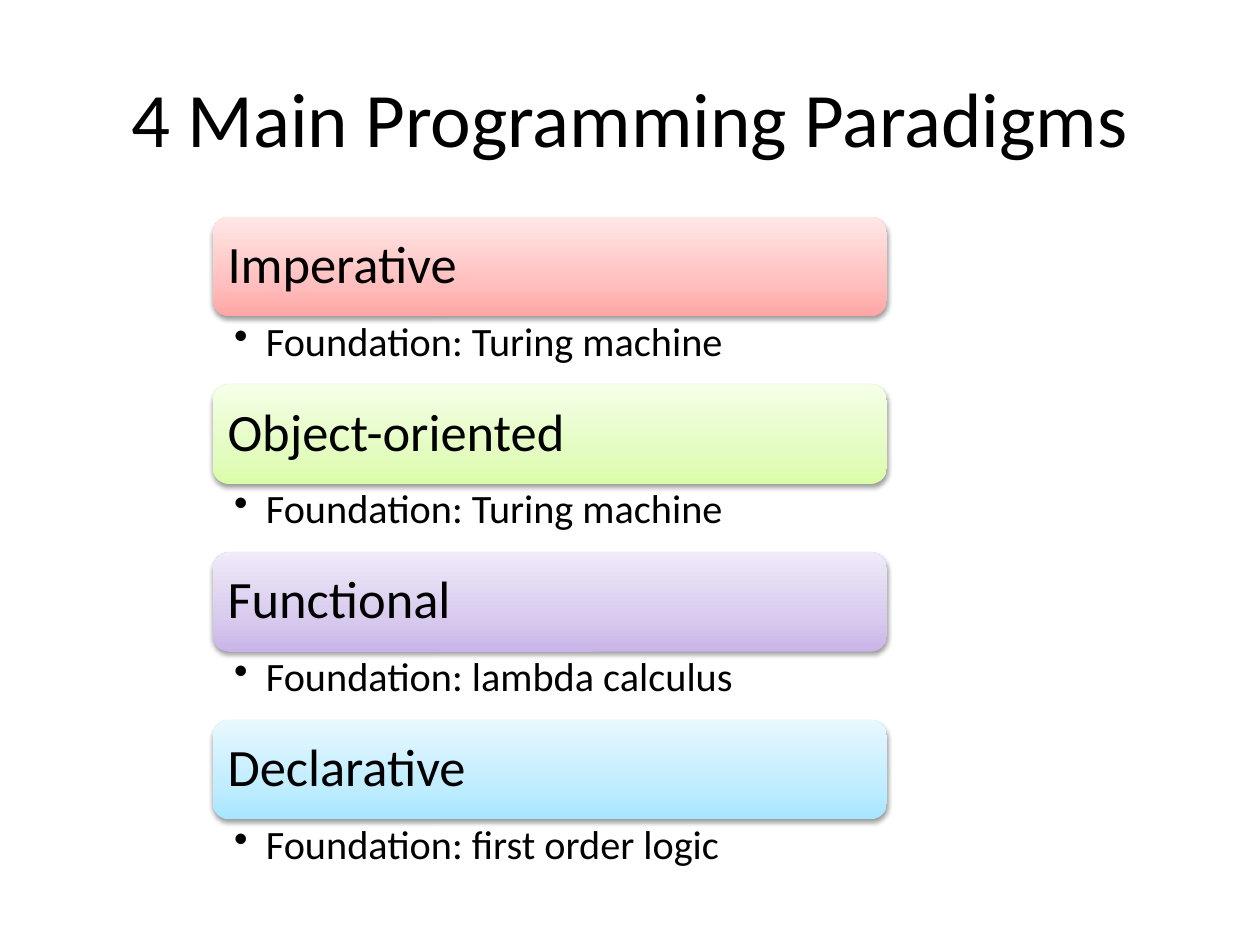
from lxml import etree
from pptx import Presentation
from pptx.dml.color import RGBColor
from pptx.enum.shapes import MSO_SHAPE
from pptx.enum.text import MSO_ANCHOR, PP_ALIGN
from pptx.oxml.ns import qn
from pptx.util import Cm, Pt

ROUNDED = MSO_SHAPE.ROUNDED_RECTANGLE
TOP, MIDDLE = MSO_ANCHOR.TOP, MSO_ANCHOR.MIDDLE
LEFT, CENTER = PP_ALIGN.LEFT, PP_ALIGN.CENTER

# Content: name, foundation, gradient colours from bottom to top
TITLE = "4 Main Programming Paradigms"
PARADIGMS = [
    ("Imperative", "Foundation: Turing machine", ("FFA6A5", "FFC0BF", "FFE7E7")),
    ("Object-oriented", "Foundation: Turing machine", ("DAFDA7", "E4FCC2", "F5FFE7")),
    ("Functional", "Foundation: lambda calculus", ("C9B5E8", "D8CBEE", "F0EAF9")),
    ("Declarative", "Foundation: first order logic", ("A7E6FF", "C1EDFF", "E7F8FF")),
]
STOPS = (0, 35, 100)

# Layout in centimetres
LIST_LEFT, LIST_TOP, LIST_WIDTH = 4.29, 4.37, 13.59
BAR_HEIGHT, DETAIL_HEIGHT = 2.01, 1.37
BULLET_INDENT = 0.64


def color(value):
    return RGBColor.from_string(value)


def add_child(parent, tag, **attributes):
    child = etree.SubElement(parent, qn(tag))
    for name, value in attributes.items():
        child.set(name, str(value))
    return child


def write_text(shape, text, size, anchor, align=LEFT, insets=(0.25, 0.13, 0.25, 0.13), spacing=1.0):
    frame = shape.text_frame
    frame.word_wrap = True
    frame.vertical_anchor = anchor
    frame.margin_left, frame.margin_top, frame.margin_right, frame.margin_bottom = map(Cm, insets)
    paragraph = frame.paragraphs[0]
    paragraph.text = text
    paragraph.alignment = align
    paragraph.line_spacing = spacing
    paragraph.font.name = "Calibri"
    paragraph.font.size = Pt(size)
    paragraph.font.color.rgb = color("000000")
    return paragraph


def set_gradient(shape, colors):
    shape.fill.gradient()
    shape.fill.gradient_angle = 90
    stops = shape._element.spPr.find(".//" + qn("a:gsLst"))
    for stop in list(stops):
        stops.remove(stop)
    for position, value in zip(STOPS, colors):
        stop = add_child(stops, "a:gs", pos=position * 1000)
        add_child(stop, "a:srgbClr", val=value)


def set_shadow(shape):
    shape.shadow.inherit = False
    effects = shape._element.spPr.find(qn("a:effectLst"))
    shadow = add_child(effects, "a:outerShdw", blurRad=Pt(3.1), dist=Pt(1.6),
                       dir=90 * 60000, rotWithShape=0)
    shadow_color = add_child(shadow, "a:srgbClr", val="000000")
    add_child(shadow_color, "a:alpha", val=38000)


def set_bullet(paragraph):
    properties = paragraph._p.get_or_add_pPr()
    properties.set("marL", str(Cm(BULLET_INDENT)))
    properties.set("indent", str(-Cm(BULLET_INDENT)))
    add_child_before_font = etree.Element(qn("a:buChar"), char="•")
    properties.find(qn("a:defRPr")).addprevious(add_child_before_font)


def add_bar(slide, top, name, colors):
    bar = slide.shapes.add_shape(ROUNDED, Cm(LIST_LEFT), Cm(top), Cm(LIST_WIDTH), Cm(BAR_HEIGHT))
    set_gradient(bar, colors)
    bar.line.fill.background()
    set_shadow(bar)
    write_text(bar, name, 30, MIDDLE, insets=(0.2,) * 4, spacing=0.9)


def add_detail(slide, top, foundation):
    box = slide.shapes.add_textbox(Cm(LIST_LEFT), Cm(top), Cm(LIST_WIDTH), Cm(DETAIL_HEIGHT))
    paragraph = write_text(box, foundation, 23, TOP, insets=(0.43, 0.1, 0.58, 0.1), spacing=0.9)
    set_bullet(paragraph)


def main():
    presentation = Presentation()
    presentation.slide_width, presentation.slide_height = Cm(25.4), Cm(19.05)
    slide = presentation.slides.add_slide(presentation.slide_layouts[6])

    # Title
    title = slide.shapes.add_textbox(Cm(1.27), Cm(0.76), Cm(22.86), Cm(3.18))
    write_text(title, TITLE, 44, MIDDLE, CENTER)

    # Paradigm list: a bar with its foundation below
    for index, (name, foundation, colors) in enumerate(PARADIGMS):
        top = LIST_TOP + index * (BAR_HEIGHT + DETAIL_HEIGHT)
        add_bar(slide, top, name, colors)
        add_detail(slide, top + BAR_HEIGHT, foundation)

    presentation.save("out.pptx")


if __name__ == "__main__":
    main()
